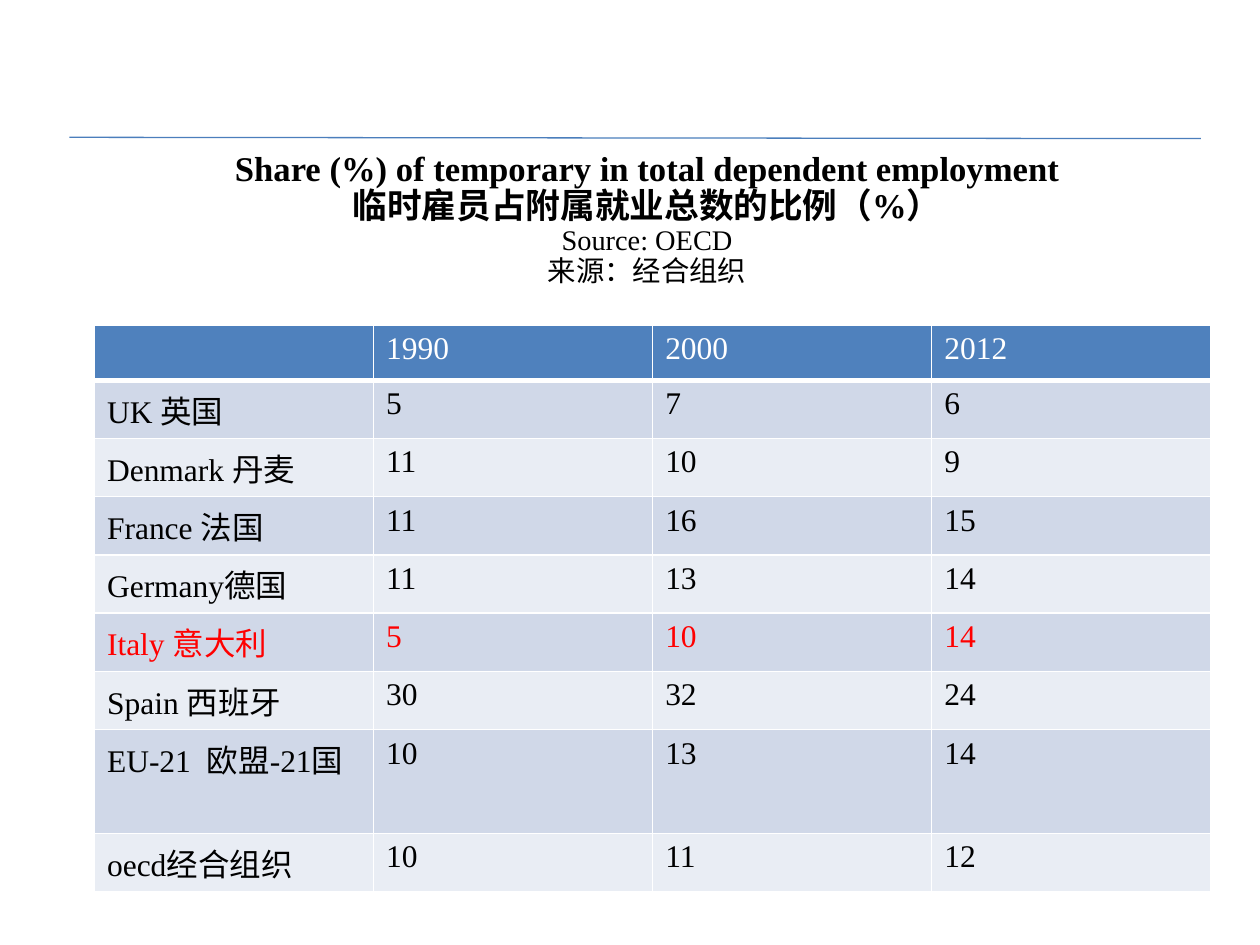
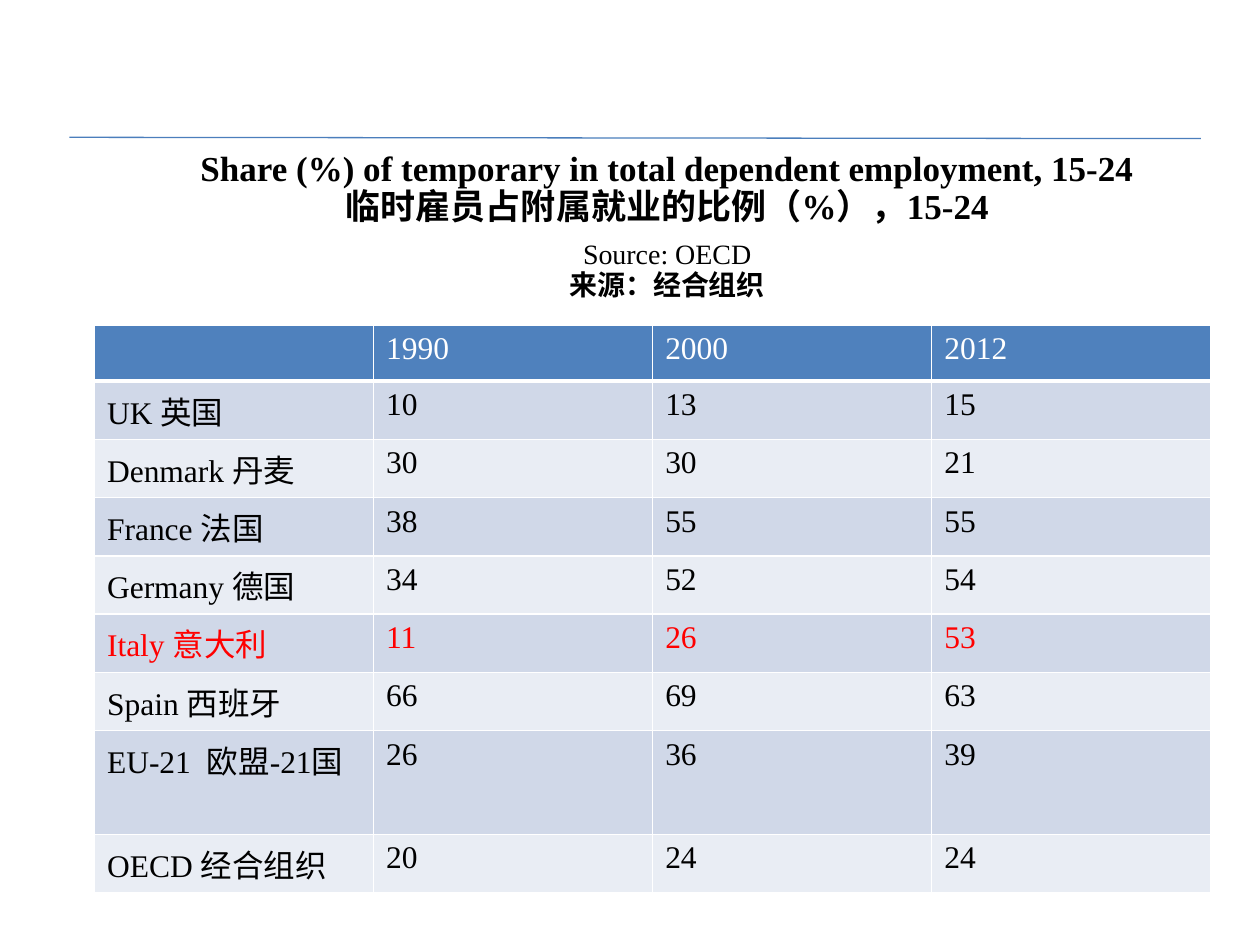
from dataclasses import dataclass

from lxml import etree
from pptx import Presentation
from pptx import util as u
from pptx.dml.color import RGBColor
from pptx.enum import shapes, text
from pptx.oxml.ns import qn

FONT = "Times New Roman"
BLACK = RGBColor(0x00, 0x00, 0x00)
WHITE = RGBColor(0xFF, 0xFF, 0xFF)
RED = RGBColor(0xFF, 0x00, 0x00)
RULE_BLUE = RGBColor(0x4B, 0x7E, 0xBC)
HEADER_BLUE = RGBColor(0x4F, 0x81, 0xBD)
BANDS = (RGBColor(0xD0, 0xD8, 0xE8), RGBColor(0xE9, 0xED, 0xF4))

YEARS = ("", "1990", "2000", "2012")
HIGHLIGHTED = "Italy 意大利"


@dataclass(frozen=True)
class TitleLine:
    text: str
    size: float
    bold: bool = False
    space_before: float = 0


@dataclass(frozen=True)
class Box:
    left: float
    top: float
    width: float
    height: float

    def lengths(self) -> tuple:
        return tuple(u.Inches(value) for value in (self.left, self.top, self.width, self.height))


@dataclass(frozen=True)
class TableSlide:
    title_box: Box
    title_lines: tuple
    table_box: Box
    rows: tuple


TABLE_SLIDES = (
    TableSlide(
        Box(0.35, 1.15, 9.57, 1.19),
        (
            TitleLine("Share (%) of temporary in total dependent employment", 19.8, True),
            TitleLine("临时雇员占附属就业总数的比例（%）", 19.8, True),
            TitleLine("Source: OECD", 16.2),
            TitleLine("来源：经合组织", 16.2),
        ),
        Box(0.75, 2.58, 8.86, 3.94),
        (
            ("UK 英国", 5, 7, 6),
            ("Denmark 丹麦", 11, 10, 9),
            ("France 法国", 11, 16, 15),
            ("Germany德国", 11, 13, 14),
            (HIGHLIGHTED, 5, 10, 14),
            ("Spain 西班牙", 30, 32, 24),
            ("EU-21  欧盟-21国", 10, 13, 14),
            ("oecd经合组织", 10, 11, 12),
        ),
    ),
    TableSlide(
        Box(0.55, 1.15, 9.49, 1.9),
        (
            TitleLine("Share (%) of temporary in total dependent employment, 15-24", 20, True),
            TitleLine("临时雇员占附属就业的比例（%），15-24", 20, True),
            TitleLine("Source: OECD", 16, space_before=8),
            TitleLine("来源：经合组织", 16, True),
        ),
        Box(0.75, 2.58, 8.86, 4.01),
        (
            ("UK 英国", 10, 13, 15),
            ("Denmark 丹麦", 30, 30, 21),
            ("France 法国", 38, 55, 55),
            ("Germany 德国", 34, 52, 54),
            (HIGHLIGHTED, 11, 26, 53),
            ("Spain 西班牙", 66, 69, 63),
            ("EU-21  欧盟-21国", 26, 36, 39),
            ("OECD 经合组织", 20, 24, 24),
        ),
    ),
)


def write(paragraph, content: str, *, size: float = 18, color: RGBColor = BLACK,
          bold: bool = False) -> None:
    run = paragraph.add_run()
    run.text = content
    run.font.name = FONT
    run.font.size = u.Pt(size)
    run.font.bold = bold
    run.font.color.rgb = color


def add_master_rule(presentation, slide) -> None:
    rule = slide.shapes.add_connector(
        shapes.MSO_CONNECTOR.STRAIGHT,
        u.Inches(0.55), u.Inches(1.09), u.Inches(9.53), u.Inches(1.1))
    rule.line.color.rgb = RULE_BLUE
    rule.line.width = u.Pt(0.75)
    etree.SubElement(rule.element.spPr, qn("a:effectLst"))
    presentation.slide_master.shapes.element.append(rule.element)


def fill_title(slide, box: Box, lines: tuple) -> None:
    title = slide.shapes.title
    title.left, title.top, title.width, title.height = box.lengths()
    frame = title.text_frame
    frame.word_wrap = True
    frame.auto_size = text.MSO_AUTO_SIZE.NONE
    frame.vertical_anchor = text.MSO_ANCHOR.TOP
    for index, line in enumerate(lines):
        paragraph = frame.add_paragraph() if index else frame.paragraphs[0]
        paragraph.alignment = text.PP_ALIGN.CENTER
        paragraph.line_spacing = 0.9
        paragraph.space_before = u.Pt(line.space_before)
        write(paragraph, line.text, size=line.size, bold=line.bold)


def set_borders(cell, bottom: float, top: float) -> None:
    properties = cell._tc.get_or_add_tcPr()
    widths = {"a:lnL": 1, "a:lnR": 1, "a:lnT": top, "a:lnB": bottom}
    for position, (side, width) in enumerate(widths.items()):
        border = etree.Element(qn(side), w=str(u.Pt(width)))
        fill = etree.SubElement(border, qn("a:solidFill"))
        etree.SubElement(fill, qn("a:srgbClr"), val=str(WHITE))
        properties.insert(position, border)


def add_share_table(slide, box: Box, rows: tuple) -> None:
    records = (YEARS, *rows)
    table = slide.shapes.add_table(len(records), len(YEARS), *box.lengths()).table
    for row_index, (row, record) in enumerate(zip(table.rows, records)):
        row.height = u.Inches(box.height / len(records))
        is_header = row_index == 0
        band = HEADER_BLUE if is_header else BANDS[(row_index - 1) % 2]
        color = WHITE if is_header else RED if record[0] == HIGHLIGHTED else BLACK
        for cell, value in zip(row.cells, record):
            cell.fill.solid()
            cell.fill.fore_color.rgb = band
            set_borders(cell, bottom=3 if is_header else 1, top=3 if row_index == 1 else 1)
            if value != "":
                write(cell.text_frame.paragraphs[0], str(value), color=color)


def main() -> None:
    presentation = Presentation()
    presentation.slide_width = u.Inches(10)
    presentation.slide_height = u.Inches(7.5)
    title_only = presentation.slide_layouts[5]
    for index, content in enumerate(TABLE_SLIDES):
        slide = presentation.slides.add_slide(title_only)
        if index == 0:
            add_master_rule(presentation, slide)
        fill_title(slide, content.title_box, content.title_lines)
        add_share_table(slide, content.table_box, content.rows)
    presentation.save("out.pptx")


if __name__ == "__main__":
    main()
